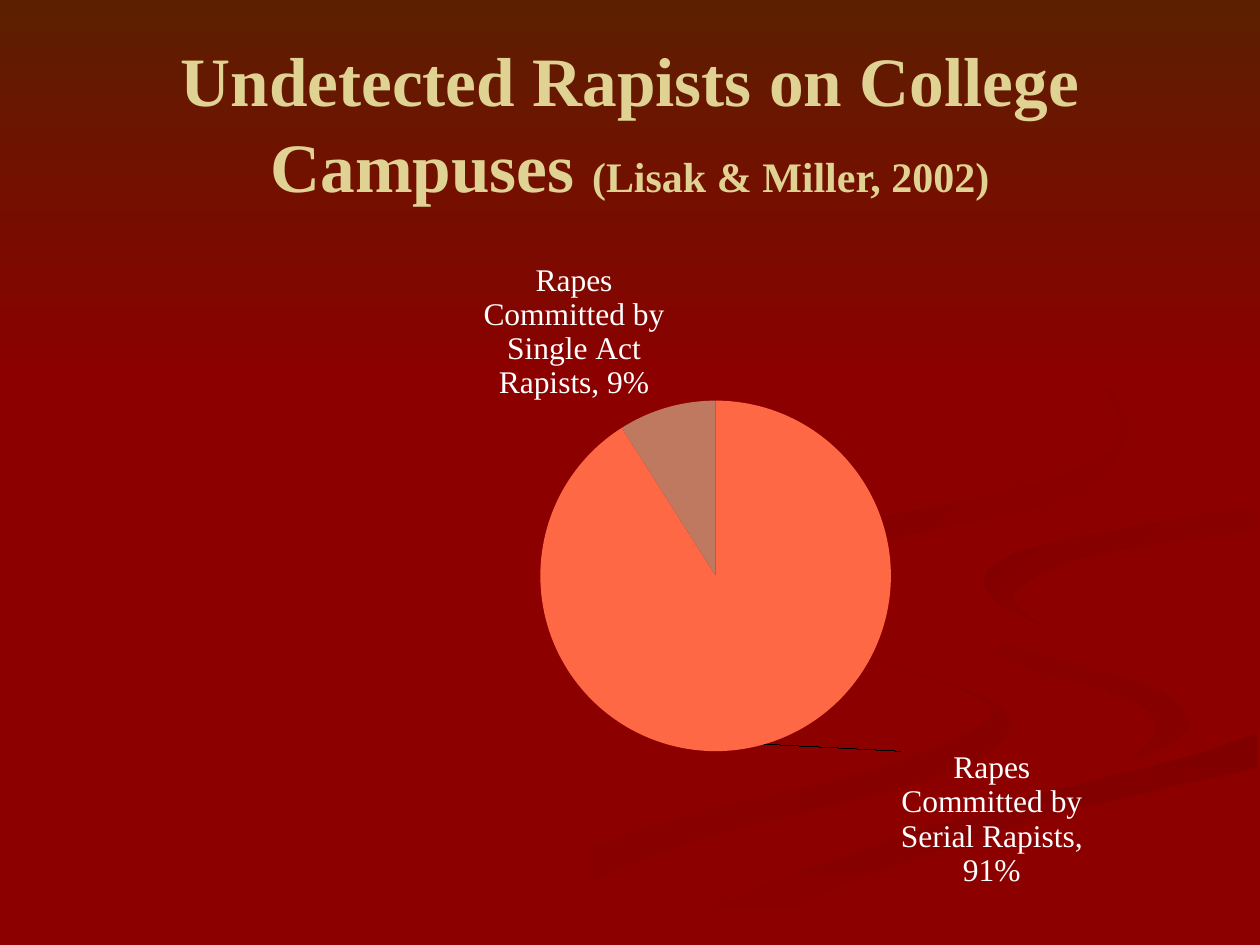
from lxml import etree
from pptx import Presentation
from pptx.chart.data import CategoryChartData
from pptx.dml.color import RGBColor
from pptx.enum.chart import XL_CHART_TYPE as ChartType, XL_LABEL_POSITION as LabelPosition
from pptx.enum.text import MSO_ANCHOR as Anchor, MSO_AUTO_SIZE as AutoSize, PP_ALIGN as Align
from pptx.oxml import parse_xml
from pptx.oxml.ns import nsdecls, qn
from pptx.util import Pt

PX = 9144  # 100 px to the inch
FONT = "Times New Roman"
COLORS = {
    "background": "8C0000", "band": "5C1F00", "title": "DFD293", "label": "FFFFFF",
    "serial": "FF6845", "single": "BE7960",
    "lower": "860000", "tail": "800000", "middle": "840000", "upper": "820000",
}
RGB = {name: RGBColor.from_string(value) for name, value in COLORS.items()}
STEPS = 5


def smooth(points):
    """Return a Catmull-Rom curve through the points of an open edge."""
    padded = [points[0], *points, points[-1]]
    curve = []
    for a, b, c, d in zip(padded, padded[1:], padded[2:], padded[3:]):
        for step in range(STEPS):
            t = step / STEPS
            curve.append(tuple(
                round(q + t * (r - p + t * (2 * p - 5 * q + 4 * r - s
                                            + t * (3 * q - p - 3 * r + s))) / 2)
                for p, q, r, s in zip(a, b, c, d)))
    return curve + [points[-1]]


def manual_layout(**settings):
    parts = "".join(f'<c:{tag} val="{value}"/>' for tag, value in settings.items())
    return parse_xml(f'<c:layout {nsdecls("c")}><c:manualLayout>{parts}</c:manualLayout></c:layout>')


presentation = Presentation()
presentation.slide_width, presentation.slide_height = 1000 * PX, 750 * PX
slide = presentation.slides.add_slide(presentation.slide_layouts[5])
slide.background.fill.solid()
slide.background.fill.fore_color.rgb = RGB["background"]

# Background ribbons: start colour, end colour, clockwise angle, two curved edges
ribbons = [
    ("background", "lower", 0,
     [(575, 459), (576, 480), (631, 505), (752, 543), (785, 570), (699, 609), (499, 661), (300, 749)],
     [(361, 749), (532, 674), (740, 618), (800, 581), (781, 553), (682, 519), (594, 485), (575, 459)]),
    ("background", "lower", 45,
     [(724, 464), (746, 500), (815, 530), (900, 557), (917, 581), (894, 605)],
     [(932, 589), (943, 570), (905, 540), (811, 515), (745, 490), (724, 464)]),
    ("tail", "background", 90,
     [(503, 749), (630, 693), (797, 638), (936, 602), (998, 581)],
     [(998, 609), (821, 651), (670, 702), (571, 749)]),
    ("background", "background", 0,
     [(999, 387), (920, 401), (788, 422), (732, 446), (734, 483), (831, 519), (931, 553),
      (936, 587), (843, 618), (663, 668), (477, 749)],
     [(503, 749), (630, 693), (797, 638), (936, 602), (999, 581)],
     [(999, 538), (866, 509), (794, 480), (786, 453), (850, 427), (999, 402)]),
    ("middle", "background", 45,
     [(998, 402), (865, 424), (799, 442), (781, 460), (791, 478), (826, 496)],
     [(806, 480), (809, 466), (859, 443), (936, 429), (998, 420)]),
    ("upper", "background", 45,
     [(762, 233), (846, 279), (889, 335), (861, 370), (763, 398), (637, 422), (580, 451),
      (584, 479), (622, 500)],
     [(593, 470), (624, 444), (739, 421), (855, 391), (894, 344), (864, 291), (762, 233)]),
    ("band", "background", 90, [(0, 0), (1000, 0)], [(1000, 308), (0, 308)]),
]
group = slide.shapes.add_group_shape()
for start, end, angle, *edges in ribbons:
    outline = [point for edge in edges for point in smooth(edge)]
    builder = group.shapes.build_freeform(*outline[0], scale=PX)
    builder.add_line_segments(outline[1:], close=True)
    shape = builder.convert_to_shape()
    shape.shadow.inherit = False
    shape.line.fill.background()
    if start == end:
        shape.fill.solid()
        shape.fill.fore_color.rgb = RGB[start]
        continue
    shape.fill.gradient()
    shape.fill.gradient_angle = 360 - angle
    for stop, name in zip(shape.fill.gradient_stops, (start, end)):
        stop.color.rgb = RGB[name]

# Title, in front of the ribbons
title = slide.shapes.title
title._element.addprevious(group._element)
title.left, title.top, title.width, title.height = (n * PX for n in (50, 30, 900, 125))
frame = title.text_frame
frame.auto_size = AutoSize.NONE
frame.word_wrap = True
frame.vertical_anchor = Anchor.MIDDLE
frame.margin_top, frame.margin_bottom = 11 * PX, 5 * PX
paragraph = frame.paragraphs[0]
paragraph.alignment = Align.CENTER
paragraph.line_spacing = 1.04
paragraph.font.name = FONT
paragraph.font.bold = True
paragraph.font.color.rgb = RGB["title"]
for text, size in (("Undetected Rapists on College Campuses ", 39.6), ("(Lisak & Miller, 2002)", 24)):
    run = paragraph.add_run()
    run.text = text
    run.font.size = Pt(size)

# Pie chart
data = CategoryChartData()
data.categories = ["Rapes Committed by Serial Rapists", "Rapes Committed by Single Act Rapists"]
data.add_series("Series 1", (91, 9))
chart = slide.shapes.add_chart(
    ChartType.PIE, *(n * PX for n in (158, 192, 820, 525)), data).chart
chart.has_legend = False
chart.has_title = False
chart.font.name = FONT
chart.font.size = Pt(18)
chart.font.color.rgb = RGB["label"]
plot = chart.plots[0]
plot.vary_by_categories = True
plot_area = plot._element.getparent()
for old_layout in plot_area.findall(qn("c:layout")):
    plot_area.remove(old_layout)
plot_area.insert(0, manual_layout(
    layoutTarget="inner", xMode="edge", yMode="edge", x=0.33, y=0.24, w=0.34, h=0.53))

# Slices and their labels
series = plot.series[0]
labels = series.data_labels
labels.number_format = '0"%"'
labels.number_format_is_linked = False
labels.position = LabelPosition.OUTSIDE_END
labels.show_category_name = True
labels.show_value = True
for index, name in enumerate(("serial", "single")):
    point = series.points[index]
    point.format.fill.solid()
    point.format.fill.fore_color.rgb = RGB[name]
    point.format.line.fill.background()

# The serial label is pulled to the right, with a leader line
label = series.points[0].data_label
label.position = LabelPosition.OUTSIDE_END
label.font.name = FONT
label.font.size = Pt(18)
label.font.color.rgb = RGB["label"]
serial_label = labels._element.find(qn("c:dLbl"))
serial_label.find(qn("c:showCatName")).set("val", "1")
index_element = serial_label.find(qn("c:idx"))
index_element.addnext(parse_xml(
    f'<c:numFmt {nsdecls("c")} formatCode="0&quot;%&quot;" sourceLinked="0"/>'))
index_element.addnext(manual_layout(x=0.13, y=0))
for element in (labels._element, serial_label):
    separator = etree.Element(qn("c:separator"))
    separator.text = ", "
    last_flag = element.findall(qn("c:showBubbleSize")) or element.findall(qn("c:showPercent"))
    last_flag[0].addnext(separator)

presentation.save("out.pptx")
